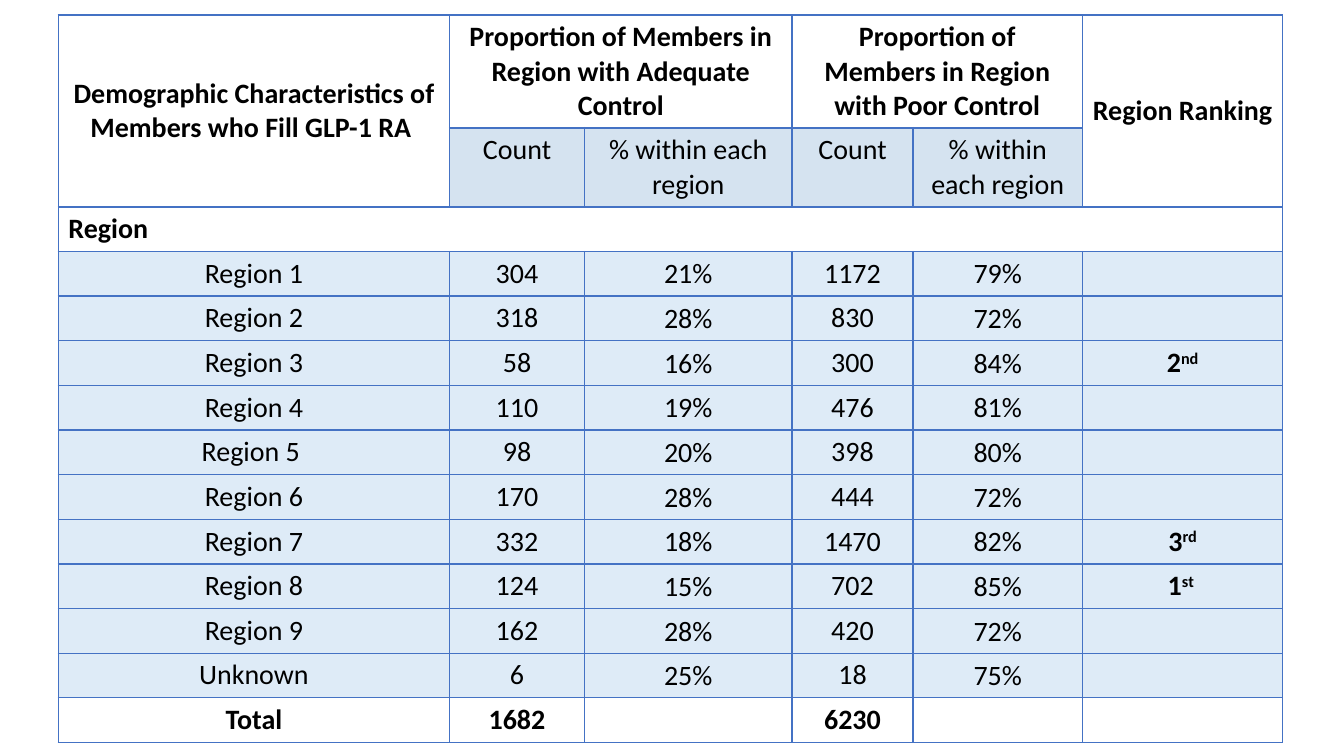
from dataclasses import dataclass
from lxml.etree import SubElement
from pptx import Presentation
from pptx.dml.color import RGBColor
from pptx.enum.text import MSO_ANCHOR, PP_ALIGN
from pptx.oxml.ns import qn
from pptx.util import Cm, Pt


@dataclass(frozen=True)
class Theme:
    font: str = "Calibri"
    size: int = 20
    text: str = "000000"
    border: str = "4472C4"
    thin: int = 1
    thick: int = 2
    subheader: tuple = ("2E75B6", 20)
    section: tuple = ("FFFFFF", 20)
    region: tuple = ("DEEBF7", 100)


class Deck:
    def __init__(self, theme):
        self.theme = theme
        self.prs = Presentation()
        self.prs.slide_width = Cm(33.87)
        self.prs.slide_height = Cm(19.05)
        self.s = self.prs.slides.add_slide(self.prs.slide_layouts[6])

    def table(self, left, top, widths, heights):
        frame = self.s.shapes.add_table(
            len(heights), len(widths), Cm(left), Cm(top),
            Cm(sum(widths)), Cm(sum(heights)))
        tbl = frame.table
        tbl.first_row = tbl.horz_banding = False
        for column, width in zip(tbl.columns, widths):
            column.width = Cm(width)
        for row, height in zip(tbl.rows, heights):
            row.height = Cm(height)
        return tbl

    def text(self, cell, content, bold=False, align=PP_ALIGN.CENTER):
        p = cell.text_frame.paragraphs[0]
        p.alignment = align
        p.font.size = Pt(self.theme.size)
        style = {"name": self.theme.font, "size": Pt(self.theme.size), "bold": bold}
        for i, part in enumerate(content.split("^")):
            if not part:
                continue
            r = p.add_run()
            r.text = part
            for key, value in style.items():
                setattr(r.font, key, value)
            r.font.color.rgb = RGBColor.from_string(self.theme.text)
            if i:
                r.font._element.set("baseline", "30000")

    def borders(self, cell, top, bottom):
        tc_pr = cell._tc.get_or_add_tcPr()
        thin = self.theme.thin
        for side, width in {"L": thin, "R": thin, "T": top, "B": bottom}.items():
            ln = SubElement(tc_pr, qn(f"a:ln{side}"), w=str(Pt(width)))
            solid = SubElement(ln, qn("a:solidFill"))
            SubElement(solid, qn("a:srgbClr"), val=self.theme.border)

    def fill(self, cell, paint):
        if paint is None:
            cell.fill.background()
            return
        color, opacity = paint
        cell.fill.solid()
        cell.fill.fore_color.rgb = RGBColor.from_string(color)
        if opacity < 100:
            clr = cell._tc.tcPr.find(f"{qn('a:solidFill')}/{qn('a:srgbClr')}")
            SubElement(clr, qn("a:alpha"), val=str(opacity * 1000))


HEADER = [
    ["Demographic Characteristics of Members who Fill GLP-1 RA ",
     "Proportion of Members in Region with Adequate Control", "",
     "Proportion of Members in Region with Poor Control", "", "Region Ranking"],
    ["", "Count", "% within each region", "Count", "% within each region", ""],
    ["Region", "", "", "", "", ""],
]
REGIONS = [
    ["Region 1", "304", "21%", "1172", "79%", ""],
    ["Region 2", "318", "28%", "830", "72%", ""],
    ["Region 3", "58", "16%", "300", "84%", "2^nd"],
    ["Region 4", "110", "19%", "476", "81%", ""],
    ["Region 5 ", "98", "20%", "398", "80%", ""],
    ["Region 6", "170", "28%", "444", "72%", ""],
    ["Region 7", "332", "18%", "1470", "82%", "3^rd"],
    ["Region 8", "124", "15%", "702", "85%", "1^st "],
    ["Region 9", "162", "28%", "420", "72%", ""],
    ["Unknown", "6", "25%", "18", "75%", ""],
]
TOTAL = ["Total", "1682", "", "6230", "", ""]
MERGES = [((0, 0), (1, 0)), ((0, 1), (0, 2)), ((0, 3), (0, 4)),
          ((0, 5), (1, 5)), ((2, 0), (2, 5))]
WIDTHS = [9.86, 3.4, 5.23, 3.05, 4.27, 5.05]
PERCENT_MARGINS = {"margin_left": Cm(0.03), "margin_right": Cm(0.03),
                   "margin_top": Cm(0.03), "margin_bottom": 0,
                   "vertical_anchor": MSO_ANCHOR.MIDDLE}


def main():
    theme = Theme()
    deck = Deck(theme)
    rows = HEADER + REGIONS + [TOTAL]
    total = len(rows) - 1
    heights = [2.84, 1.98] + [13.51 / 12] * 12
    tbl = deck.table(1.47, 0.38, WIDTHS, heights)
    for start, end in MERGES:
        tbl.cell(*start).merge(tbl.cell(*end))
    paints = {1: theme.subheader, 2: theme.section, total: theme.section}

    for i, row in enumerate(rows):
        for j, content in enumerate(row):
            cell = tbl.cell(i, j)
            in_region = 2 < i < total
            outer_header = i < 2 and j in (0, 5)
            deck.borders(cell, theme.thick if i in (1, 2) else theme.thin,
                         theme.thick if i < 2 else theme.thin)
            paint = theme.region if in_region else paints.get(i)
            deck.fill(cell, None if outer_header else paint)
            if outer_header:
                cell.vertical_anchor = MSO_ANCHOR.MIDDLE
            if in_region and j in (2, 4):
                for key, value in PERCENT_MARGINS.items():
                    setattr(cell, key, value)
            if not cell.is_spanned:
                deck.text(cell, content,
                          bold=i in (0, 2, total) or j == 5,
                          align=PP_ALIGN.LEFT if i == 2 else PP_ALIGN.CENTER)
    deck.prs.save("out.pptx")


if __name__ == "__main__":
    main()
